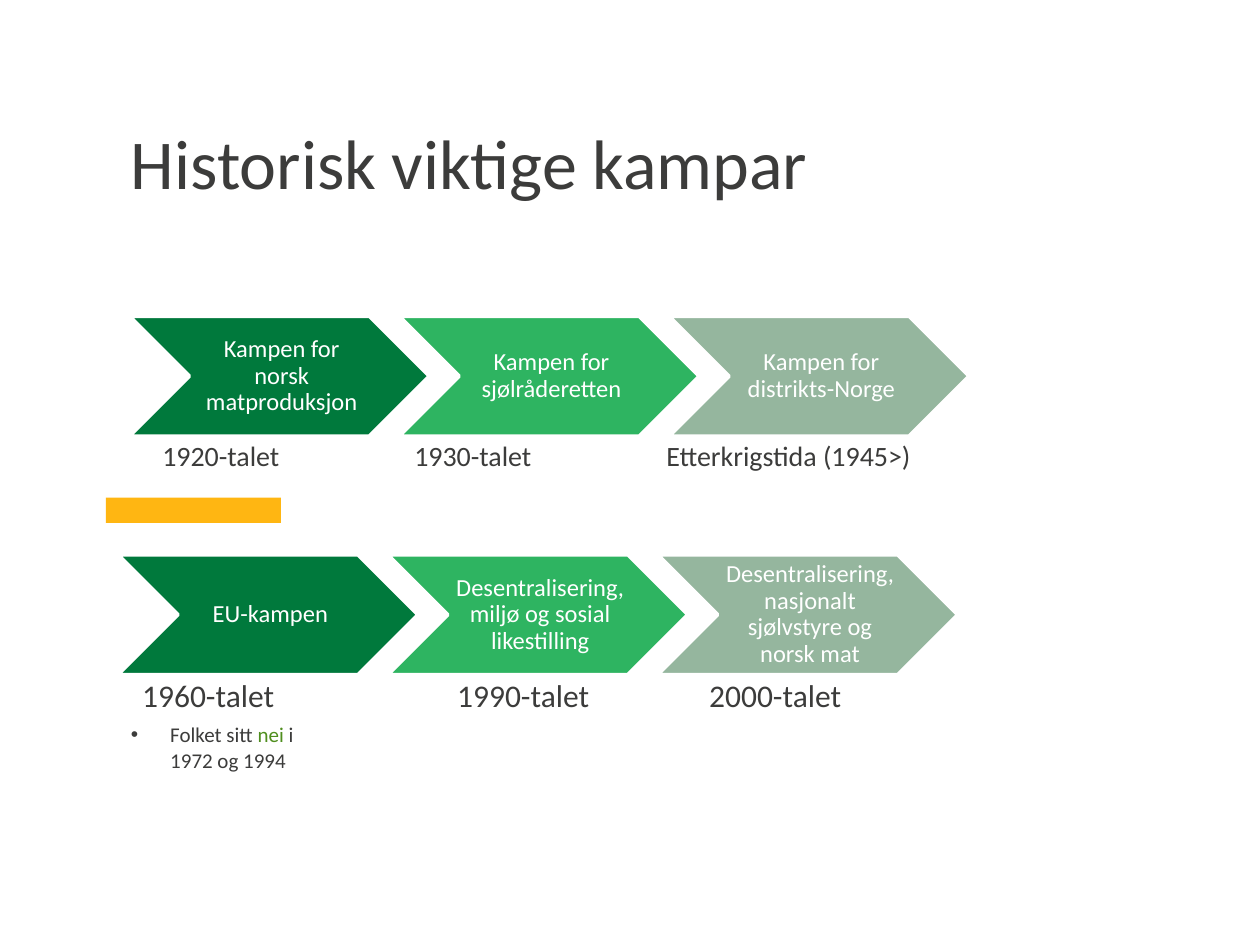
"""Build a slide with two rows of chevrons showing historic political struggles."""
from lxml import etree
from pptx import Presentation
from pptx.dml.color import RGBColor
from pptx.enum import shapes, text
from pptx.oxml.ns import qn
from pptx.util import Pt

FONT = "Calibri"
COLORS = {"text": "3C3C3B", "white": "FFFFFF", "bar": "FFB612", "no": "4F8E1E"}
STEP_FILLS = ["00793C", "2EB461", "95B69E"]
TITLE = "Historisk viktige kampar"
ROWS = [
    {"left": 74, "top": 180.7,
     "steps": ["Kampen for norsk matproduksjon", "Kampen for sjølråderetten",
               "Kampen for distrikts-Norge"],
     "periods": ["1920-talet", "1930-talet", "Etterkrigstida (1945>)"],
     "box": (85.7, 247, 482.4, 26.6), "size": 16, "tabs": [144, 288]},
    {"left": 67.5, "top": 317,
     "steps": ["EU-kampen", "Desentralisering, miljø og sosial likestilling",
               "Desentralisering, nasjonalt sjølvstyre og norsk mat"],
     "periods": ["1960-talet", "1990-talet", "2000-talet"],
     "box": (74.2, 383, 496, 29), "size": 18, "tabs": [180, 324]},
]
NOTE = [("Folket sitt ", "text"), ("nei ", "no"), ("i 1972 og 1994", "text")]
STEP_W, STEP_H, PITCH = 171.3, 68.5, 154.2


def rgb(value):
    return RGBColor.from_string(value)


def style(font, size, color):
    font.name, font.size, font.color.rgb = FONT, Pt(size), rgb(COLORS[color])


def add_box(s, box):
    tf = s.shapes.add_textbox(*map(Pt, box)).text_frame
    tf.word_wrap = True
    return tf, tf.paragraphs[0]


def add_filled(s, kind, box, fill):
    sp = s.shapes.add_shape(kind, *map(Pt, box))
    sp.shadow.inherit = False
    sp.fill.solid()
    sp.fill.fore_color.rgb = rgb(fill)
    sp.line.fill.background()
    return sp


def add_step(s, box, label, fill):
    sp = add_filled(s, shapes.MSO_SHAPE.CHEVRON, box, fill)
    sp.line.color.rgb, sp.line.width = rgb(COLORS["white"]), Pt(2)
    tf = sp.text_frame
    tf.text, tf.word_wrap = label, True
    tf.vertical_anchor = text.MSO_ANCHOR.MIDDLE
    tf.margin_left = Pt(4)
    tf.margin_right = tf.margin_top = tf.margin_bottom = Pt(1.3)
    p = tf.paragraphs[0]
    p.alignment, p.line_spacing = text.PP_ALIGN.CENTER, 0.9
    style(p.runs[0].font, 14, "white")


def add_periods(s, row):
    tf, p = add_box(s, row["box"])
    p.text = "\t".join(row["periods"])
    stops = etree.SubElement(p._p.get_or_add_pPr(), qn("a:tabLst"))
    for pos in row["tabs"]:
        etree.SubElement(stops, qn("a:tab"), pos=str(Pt(pos)), algn="l")
    for r in p.runs:
        style(r.font, row["size"], "text")


def add_note(s):
    tf, p = add_box(s, (67.7, 409, 113.8, 36))
    ppr = p._p.get_or_add_pPr()
    ppr.set("marL", str(Pt(22.5)))
    ppr.set("indent", str(Pt(-22.5)))
    etree.SubElement(ppr, qn("a:buFont"), typeface="Arial")
    etree.SubElement(ppr, qn("a:buChar"), char="•")
    for words, color in NOTE:
        r = p.add_run()
        r.text = words
        style(r.font, 12, color)


def main():
    prs = Presentation()
    prs.slide_width, prs.slide_height = Pt(720), Pt(540)
    s = prs.slides.add_slide(prs.slide_layouts[6])
    add_filled(s, shapes.MSO_SHAPE.RECTANGLE, (60.5, 284.4, 100, 14.4), COLORS["bar"])
    tf, p = add_box(s, (67.7, 64.8, 414, 55.4))
    p.text = TITLE
    style(p.runs[0].font, 40, "text")
    for row in ROWS:
        for i, (label, fill) in enumerate(zip(row["steps"], STEP_FILLS)):
            add_step(s, (row["left"] + i * PITCH, row["top"], STEP_W, STEP_H), label, fill)
        add_periods(s, row)
    add_note(s)
    prs.save("out.pptx")


if __name__ == "__main__":
    main()
